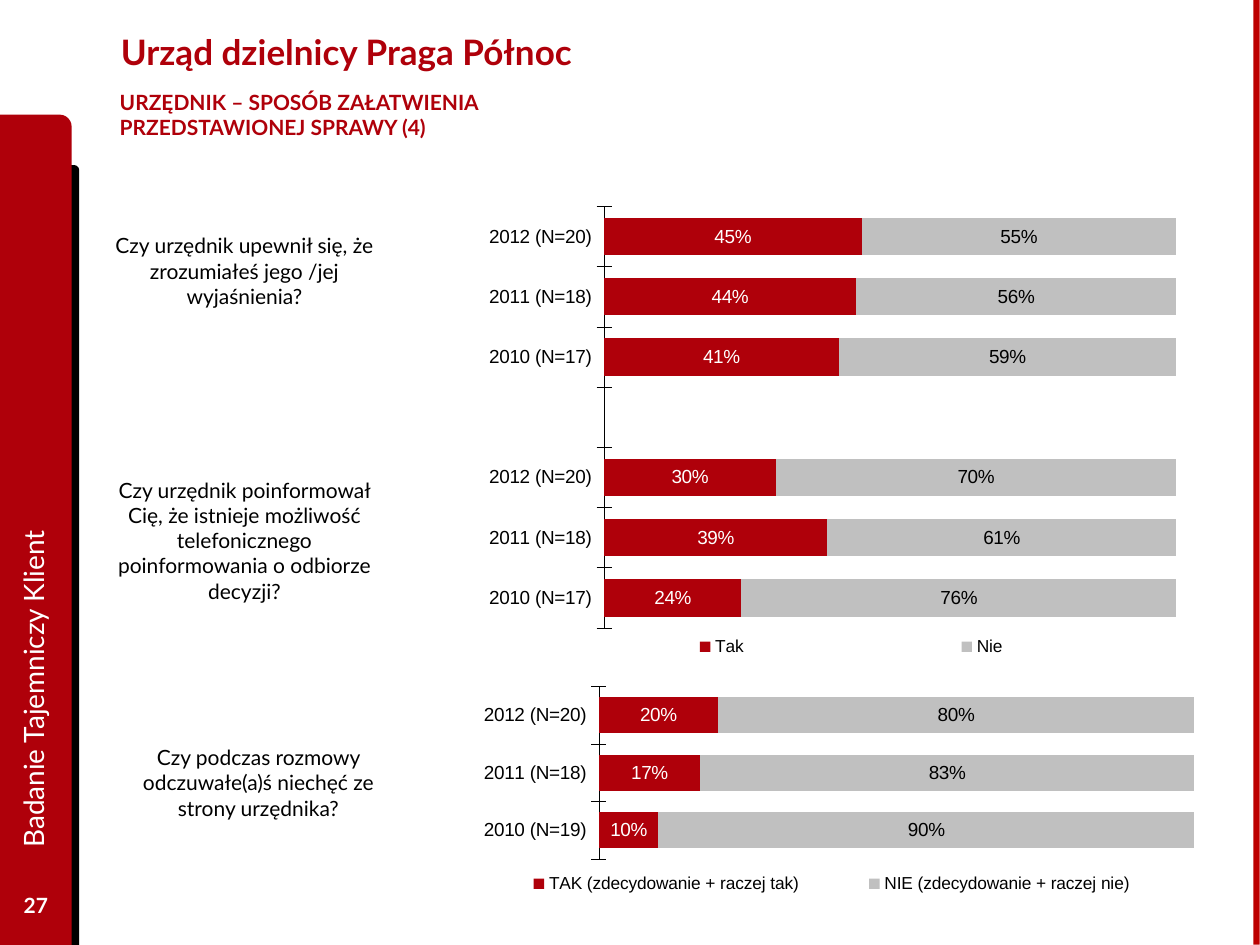
from lxml import etree
from pptx import Presentation
from pptx import util as u
from pptx.chart import data as cd
from pptx.dml.color import RGBColor
from pptx.enum import chart as ch, shapes, text
from pptx.oxml import ns

RED, GREY, BLACK, WHITE = "AF000A", "C0C0C0", "000000", "FFFFFF"
MIDDLE = text.MSO_ANCHOR.MIDDLE
CENTER = text.PP_ALIGN.CENTER


def rgb(value):
    return RGBColor.from_string(value)


def apply(target, values):
    for name, value in values.items():
        setattr(target, name, value)


def box(left, top, width, height):
    return [u.Pt(n) for n in (left, top, width, height)]


def style_font(font, size, color=BLACK, name="Arial", bold=False):
    apply(font, {"size": u.Pt(size), "name": name, "bold": bold})
    font.color.rgb = rgb(color)


def add_block(slide, kind, place, color, rotation=0):
    block = slide.shapes.add_shape(kind, *box(*place))
    block.fill.solid()
    block.fill.fore_color.rgb = rgb(color)
    block.line.fill.background()
    apply(block, {"rotation": rotation})
    block.shadow.inherit = False


def add_label(slide, words, place, size, color, bold=False, align=None,
              rotation=0, **frame_format):
    label = slide.shapes.add_textbox(*box(*place))
    label.rotation = rotation
    apply(label.text_frame, {"word_wrap": True, **frame_format})
    paragraph = label.text_frame.paragraphs[0]
    paragraph.alignment = align
    run = paragraph.add_run()
    run.text = words
    style_font(run.font, size, color, "Lato", bold)


def set_layout(parent, tag_before, area, inner=False):
    for old in parent.findall(ns.qn("c:layout")):
        parent.remove(old)
    layout = etree.Element(ns.qn("c:layout"))
    manual = etree.SubElement(layout, ns.qn("c:manualLayout"))
    values = {"xMode": "edge", "yMode": "edge", **dict(zip("xywh", area))}
    if inner:
        values = {"layoutTarget": "inner", **values}
    for name, value in values.items():
        etree.SubElement(manual, ns.qn("c:" + name)).set("val", str(value))
    before = parent.find(ns.qn(tag_before)) if tag_before else None
    if before is None:
        parent.insert(0, layout)
    else:
        before.addnext(layout)


def add_answers(slide, place, years, answers, plot_area, legend_area, legend_side):
    data = cd.CategoryChartData(number_format="0%")
    data.categories = years
    for answer, shares in answers.items():
        data.add_series(answer, shares)
    chart = slide.shapes.add_chart(
        ch.XL_CHART_TYPE.BAR_STACKED, *box(*place), data).chart
    apply(chart, {"has_title": False, "has_legend": True})
    style_font(chart.font, 10.8)

    apply(chart.legend, {"position": legend_side, "include_in_layout": False})
    style_font(chart.legend.font, 9.9)
    set_layout(chart.legend._element, "c:legendPos", legend_area)
    set_layout(chart._chartSpace.chart.plotArea, None, plot_area, inner=True)

    year_axis, share_axis = chart.category_axis, chart.value_axis
    apply(year_axis, {"reverse_order": True, "has_major_gridlines": False,
                      "major_tick_mark": ch.XL_TICK_MARK.CROSS,
                      "minor_tick_mark": ch.XL_TICK_MARK.NONE})
    style_font(year_axis.tick_labels.font, 10.8)
    year_axis.format.line.color.rgb = rgb(BLACK)
    year_axis.format.line.width = u.Pt(0.23)
    apply(share_axis, {"minimum_scale": 0, "maximum_scale": 1, "major_unit": 0.2,
                       "has_major_gridlines": False, "visible": False})

    plot = chart.plots[0]
    apply(plot, {"gap_width": 60, "overlap": 100, "vary_by_categories": False})
    for series, fill, ink in zip(plot.series, (RED, GREY), (WHITE, BLACK)):
        series.format.fill.solid()
        series.format.fill.fore_color.rgb = rgb(fill)
        labels = series.data_labels
        apply(labels, {"show_value": True, "number_format": "0%",
                       "number_format_is_linked": False})
        style_font(labels.font, 10.8, ink)


def add_frame(slide):
    corner = shapes.MSO_SHAPE.ROUND_1_RECTANGLE
    add_block(slide, corner, (28, 94.3, 17.3, 445.7), BLACK)
    add_block(slide, corner, (0, 65.5, 41, 474.5), RED)
    add_block(slide, shapes.MSO_SHAPE.RECTANGLE, (448, 268, 540, 3.6), "BD0000", 90)
    add_label(slide, "Urząd dzielnicy Praga Północ", (62, 3.6, 559.4, 51.8),
              20, RED, True, vertical_anchor=MIDDLE)
    add_label(slide, "Badanie Tajemniczy Klient", (-188.6, 265.7, 414.7, 36.7),
              16, WHITE, rotation=270, vertical_anchor=MIDDLE)
    add_label(slide, "27", (0, 502.6, 41, 28.8), 12, WHITE, True, CENTER,
              vertical_anchor=MIDDLE)
    add_label(slide, "URZĘDNIK – SPOSÓB ZAŁATWIENIA PRZEDSTAWIONEJ SPRAWY (4)",
              (54, 47.5, 277.2, 23.8), 12, RED, True, word_wrap=False,
              margin_left=u.Pt(14.4), margin_right=u.Pt(14.4))


def main():
    deck = Presentation()
    apply(deck, {"slide_width": u.Pt(720), "slide_height": u.Pt(540)})
    slide = deck.slides.add_slide(deck.slide_layouts[6])
    add_frame(slide)

    questions = [
        ("Czy urzędnik poinformował Cię, że istnieje możliwość telefonicznego "
         "poinformowania o odbiorze decyzji?", 54, 269.3, 80),
        ("Czy urzędnik upewnił się, że zrozumiałeś jego /jej wyjaśnienia?",
         54, 129.6, 51),
        ("Czy podczas rozmowy odczuwałe(a)ś niechęć ze strony urzędnika?",
         62, 422, 51),
    ]
    for question, left, top, height in questions:
        add_label(slide, question, (left, top, 171.4, height), 12, BLACK,
                  align=CENTER, auto_size=text.MSO_AUTO_SIZE.SHAPE_TO_FIT_TEXT)

    add_answers(
        slide, (54.7, 391.7, 627.8, 125.3),
        ["2012 (N=20)", "2011 (N=18)", "2010 (N=19)"],
        {"TAK (zdecydowanie + raczej tak)": (0.2, 0.17, 0.1),
         "NIE (zdecydowanie + raczej nie)": (0.8, 0.83, 0.9)},
        (0.459, 0.005, 0.542, 0.787), (0.34, 0.84, 0.66, 0.13),
        ch.XL_LEGEND_POSITION.BOTTOM)

    years = ["2012 (N=20)", "2011 (N=18)", "2010 (N=17)"]
    add_answers(
        slide, (100.8, 114.5, 593.3, 267.1), years + [""] + years,
        {"Tak": (0.45, 0.44, 0.41, None, 0.3, 0.39, 0.24),
         "Nie": (0.55, 0.56, 0.59, None, 0.7, 0.61, 0.76)},
        (0.412, 0.013, 0.551, 0.902), (0.3, 0.92, 0.7, 0.07),
        ch.XL_LEGEND_POSITION.RIGHT)
    deck.save("out.pptx")


if __name__ == "__main__":
    main()
